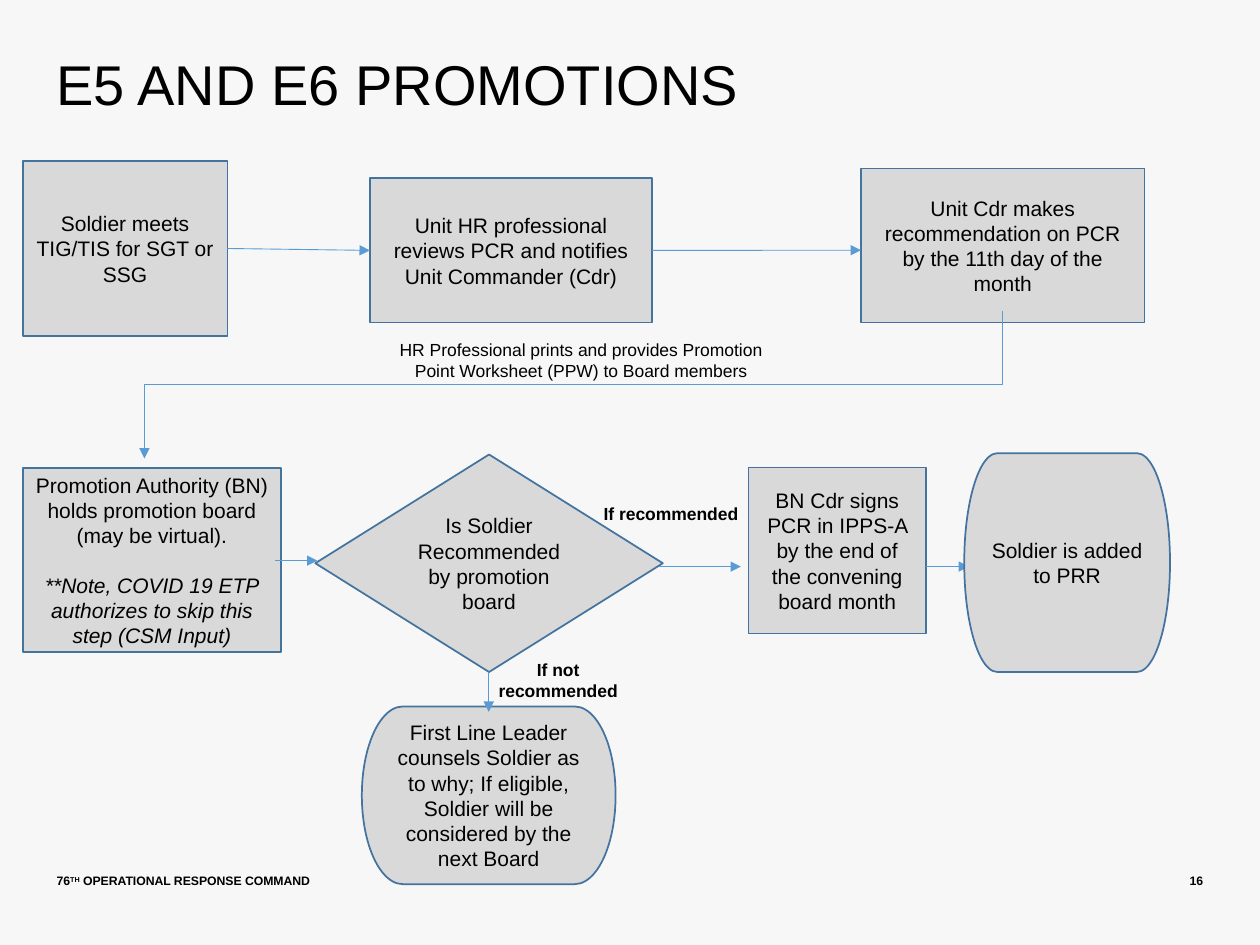
from pptx import Presentation
from pptx.dml.color import RGBColor
from pptx.enum.shapes import MSO_CONNECTOR, MSO_SHAPE
from pptx.enum.text import MSO_ANCHOR, MSO_AUTO_SIZE, PP_ALIGN
from pptx.oxml.ns import qn
from pptx.util import Pt
from lxml.etree import SubElement

COLORS = {
    "background": "F7F7F7",
    "text": "000000",
    "box": "D9D9D9",
    "outline": "43739E",
    "arrow": "5B9BD5",
}
COLORS = {name: RGBColor.from_string(value) for name, value in COLORS.items()}


def write(shape, paragraphs, align, anchor, margins=None, wrap=True, **font):
    """Fill a shape with paragraphs, each a list of (text, font values) spans."""
    frame = shape.text_frame
    frame.word_wrap = wrap
    frame.vertical_anchor = anchor
    if margins is not None:
        for side in ("left", "top", "right", "bottom"):
            setattr(frame, f"margin_{side}", Pt(margins))
    for index, spans in enumerate(paragraphs):
        para = frame.add_paragraph() if index else frame.paragraphs[0]
        para.alignment = align
        if index:
            para.space_before = Pt(13.8)  # one line of 12 pt text
        for text, values in spans:
            span = para.add_run()
            span.text = text
            span.font.color.rgb = COLORS["text"]
            for name, value in {"name": "Arial", **font, **values}.items():
                setattr(span.font, name, value)


def add_step(name):
    kind, position, paragraphs = steps[name]
    step = slide.shapes.add_shape(kind, *map(Pt, position))
    step.shadow.inherit = False
    step.fill.solid()
    step.fill.fore_color.rgb = COLORS["box"]
    step.line.color.rgb = COLORS["outline"]
    step.line.width = Pt(1)
    write(step, paragraphs, PP_ALIGN.CENTER, MSO_ANCHOR.MIDDLE, size=Pt(12))
    return step


deck = Presentation()
deck.slide_width, deck.slide_height = Pt(720), Pt(540)
slide = deck.slides.add_slide(deck.slide_layouts[5])
slide.background.fill.solid()
slide.background.fill.fore_color.rgb = COLORS["background"]

# Title
title = slide.shapes.title
title.left, title.top, title.width, title.height = map(Pt, (32.4, 32.4, 486, 72))
write(title, [[("E5 AND E6 PROMOTIONS", {})]], PP_ALIGN.LEFT, MSO_ANCHOR.TOP,
      margins=0, size=Pt(32))
title.text_frame.auto_size = MSO_AUTO_SIZE.NONE
title.text_frame.paragraphs[0].line_spacing = 0.9

# Footer
footer = slide.shapes.add_textbox(Pt(32.4), Pt(493.2), Pt(316.8), Pt(14.4))
footer_spans = [("76", {}), ("TH", {}), (" OPERATIONAL RESPONSE COMMAND", {})]
page_number = slide.shapes.add_textbox(Pt(625), Pt(493.2), Pt(62.6), Pt(14.4))
for box, spans, align in (
    (footer, footer_spans, PP_ALIGN.LEFT),
    (page_number, [("16", {})], PP_ALIGN.RIGHT),
):
    write(box, [spans], align, MSO_ANCHOR.BOTTOM, margins=0, wrap=False,
          size=Pt(7), bold=True)
ordinal = footer.text_frame.paragraphs[0].runs[1]
ordinal.font._element.set("baseline", "30000")

# Flowchart steps: kind, (left, top, width, height), paragraphs
PROCESS = MSO_SHAPE.FLOWCHART_PROCESS
DECISION = MSO_SHAPE.FLOWCHART_DECISION
TERMINATOR = MSO_SHAPE.FLOWCHART_TERMINATOR
steps = {
    "eligible": (PROCESS, (13, 92, 117, 100),
                 [[("Soldier meets TIG/TIS for SGT or SSG", {})]]),
    "review": (PROCESS, (211.4, 101.9, 161.3, 82.4),
               [[("Unit HR professional reviews PCR and notifies Unit Commander (Cdr)", {})]]),
    "recommendation": (PROCESS, (492, 96.3, 162, 88),
                       [[("Unit Cdr makes recommendation on PCR by the 11th day of the month", {})]]),
    "board": (PROCESS, (13, 267.5, 147.7, 105.2),
              [[("Promotion Authority (BN) holds promotion board (may be virtual).", {})],
               [("**Note, COVID 19 ETP authorizes to skip this step (CSM Input)",
                 {"italic": True})]]),
    "decision": (DECISION, (180.2, 259.7, 198.6, 124.3),
                 [[("Is Soldier Recommended by promotion board", {})]]),
    "signature": (PROCESS, (427.7, 267.2, 101.5, 94.8),
                  [[("BN Cdr signs PCR in IPPS-A by the end of the convening board month", {})]]),
    "counseling": (TERMINATOR, (206.8, 403.7, 145, 101.5),
                   [[("First Line Leader counsels Soldier as to why; If eligible, "
                      "Soldier will be considered by the next Board", {})]]),
    "added": (TERMINATOR, (551, 259, 117.6, 125),
              [[("Soldier is added to PRR", {})]]),
}
drawn = {name: add_step(name) for name in steps if name != "added"}

# Arrows: kind, (from x, from y, to x, to y), step joined at start, at end
STRAIGHT, ELBOW = MSO_CONNECTOR.STRAIGHT, MSO_CONNECTOR.ELBOW
RIGHT_SIDE, LEFT_SIDE = 3, 1
arrows = [
    (STRAIGHT, (130, 143, 211.4, 143), "eligible", "review"),
    (STRAIGHT, (372.7, 143, 492, 143), "review", None),
    (ELBOW, (285.6, -25.2, 369.8, 465.1), None, None),
    (STRAIGHT, (157.2, 320.4, 181.4, 320.4), None, None),
    (STRAIGHT, (376.6, 323.8, 423.4, 323.8), None, None),
    (STRAIGHT, (529.2, 323.8, 553.7, 323.8), None, None),
    (STRAIGHT, (279.3, 384, 279.3, 406.8), None, None),
]
for kind, ends, start, end in arrows:
    arrow = slide.shapes.add_connector(kind, *map(Pt, ends))
    if start:
        arrow.begin_connect(drawn[start], RIGHT_SIDE)
    if end:
        arrow.end_connect(drawn[end], LEFT_SIDE)
    arrow.line.color.rgb = COLORS["arrow"]
    arrow.line.width = Pt(0.5)
    properties = arrow._element.spPr
    SubElement(properties.find(qn("a:ln")), qn("a:tailEnd"), type="triangle")
    SubElement(properties, qn("a:effectLst"))
    if kind == ELBOW:  # a quarter turn makes it leave and arrive vertically
        properties.find(qn("a:xfrm")).set("rot", "5400000")

# The last step covers the tip of the arrow that leads to it
add_step("added")

# Arrow labels
labels = [
    ((211.7, 190.1, 240.5, 31.7), False,
     "HR Professional prints and provides Promotion Point Worksheet (PPW) to Board members"),
    ((332.6, 283.7, 101.5, 19.4), True, "If recommended"),
    ((273.6, 373, 90.7, 31.7), True, "If not recommended"),
]
for position, bold, text in labels:
    label = slide.shapes.add_textbox(*map(Pt, position))
    write(label, [[(text, {})]], PP_ALIGN.CENTER, MSO_ANCHOR.TOP,
          size=Pt(10), bold=bold)

deck.save("out.pptx")
